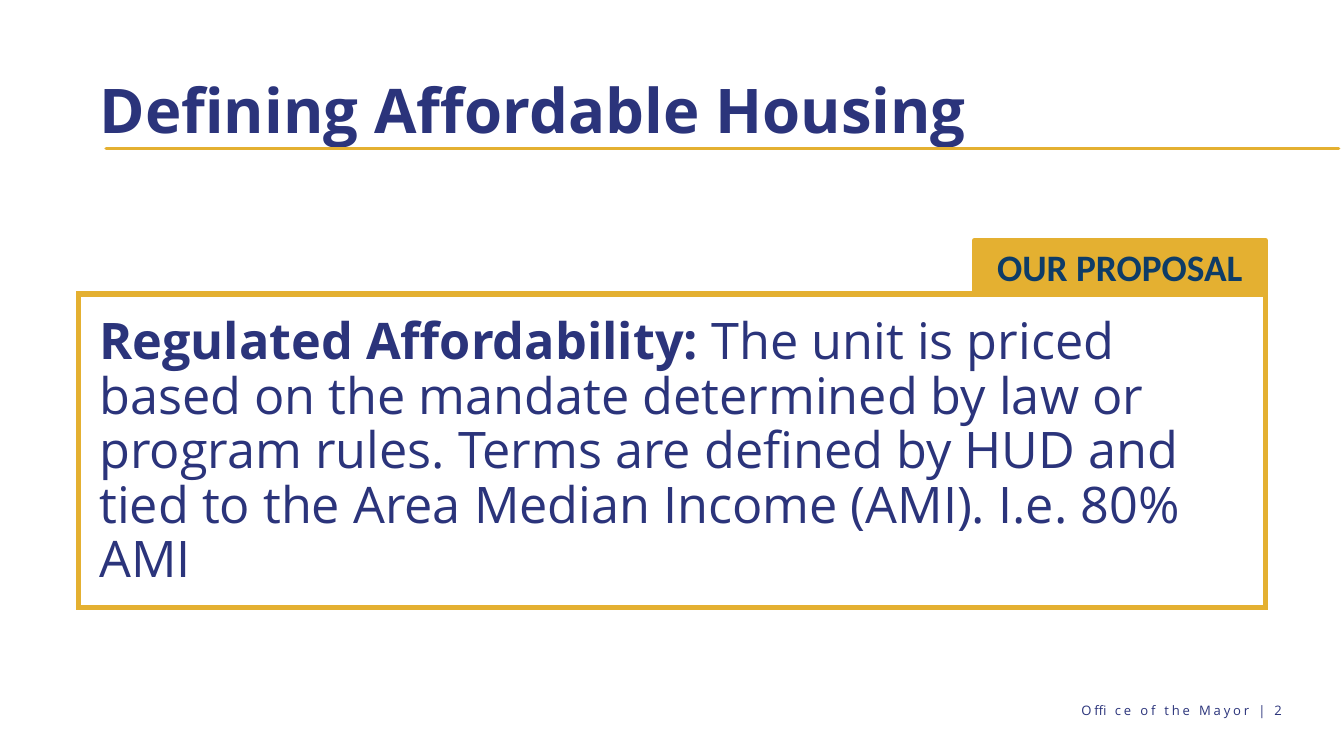
from lxml.etree import SubElement
from pptx import Presentation
from pptx.dml.color import RGBColor
from pptx.enum.shapes import MSO_CONNECTOR, MSO_SHAPE
from pptx.enum.text import MSO_ANCHOR, MSO_AUTO_SIZE, PP_ALIGN
from pptx.oxml.ns import qn
from pptx.util import Inches, Pt

NAVY = RGBColor(0x2B, 0x34, 0x7B)
INK = RGBColor(0x0E, 0x3C, 0x67)
GOLD = RGBColor(0xE4, 0xB0, 0x31)

# Each run is (text, bold)
TITLE = [("Defining Affordable Housing", True)]
BODY = [
    ("Regulated Affordability: ", True),
    ("The unit is priced based on the mandate determined by law or program "
     "rules. Terms are defined by HUD and tied to the Area Median Income "
     "(AMI). I.e. 80% AMI", False),
]
TAG = [("OUR PROPOSAL", True)]
FOOTER = [("Office of the Mayor | 2", False)]

WIDE, HIGH = 20, 11.25
LEFT, SPAN = 1.38, 17.25                  # text column
EDGE, RIGHT = 1.17, 18.83                 # frame sides
TAG_WIDE = 4.33


def place(shape, left, top, width, height):
    shape.left, shape.top = Inches(left), Inches(top)
    shape.width, shape.height = Inches(width), Inches(height)


def write(shape, runs, size, color=NAVY, font="Open Sans", align=PP_ALIGN.LEFT,
          anchor=MSO_ANCHOR.TOP, lines=1.0, track=0):
    """Fill a shape with one paragraph; track is letter spacing in points."""
    frame = shape.text_frame
    frame.word_wrap = True
    frame.auto_size = MSO_AUTO_SIZE.NONE
    frame.vertical_anchor = anchor
    para = frame.paragraphs[0]
    para.alignment, para.line_spacing = align, lines
    for text, bold in runs:
        run = para.add_run()
        run.text = text
        run.font.name, run.font.size = font, Pt(size)
        run.font.bold, run.font.color.rgb = bold, color
        if track:
            run._r.get_or_add_rPr().set("spc", str(track * 100))


def add_box(slide, left, top, width, height, fill=None):
    box = slide.shapes.add_shape(MSO_SHAPE.RECTANGLE, 0, 0, 0, 0)
    place(box, left, top, width, height)
    box.shadow.inherit = False
    if fill is None:
        box.fill.background()
    else:
        box.fill.solid()
        box.fill.fore_color.rgb = fill
    box.line.color.rgb, box.line.width = GOLD, Pt(6)
    return box


def add_text(slide, left, top, width, height):
    return slide.shapes.add_textbox(*map(Inches, (left, top, width, height)))


def main():
    deck = Presentation()
    deck.slide_width, deck.slide_height = Inches(WIDE), Inches(HIGH)
    slide = deck.slides.add_slide(deck.slide_layouts[5])

    title = slide.shapes.title
    place(title, LEFT, 0.6, SPAN, 2.17)
    write(title, TITLE, 66, anchor=MSO_ANCHOR.MIDDLE, lines=0.9)

    body = add_text(slide, LEFT, 4.66, SPAN, 4.2)
    write(body, BODY, 54, lines=0.9)

    footer = add_text(slide, 14.84, 10.46, 4.24, 0.24)
    frame = footer.text_frame
    frame.margin_left = frame.margin_right = 0
    frame.margin_top = frame.margin_bottom = 0
    write(footer, FOOTER, 14, align=PP_ALIGN.RIGHT, track=3)

    rule = slide.shapes.add_connector(
        MSO_CONNECTOR.STRAIGHT, *map(Inches, (1.58, 2.21, 19.92, 2.21)))
    rule.line.color.rgb, rule.line.width = GOLD, Pt(4)
    rule.line._get_or_add_ln().set("cap", "rnd")
    SubElement(rule._element.spPr, qn("a:effectLst"))

    outline = add_box(slide, EDGE, 4.38, RIGHT - EDGE, 4.66)
    SubElement(outline.line._get_or_add_ln(), qn("a:miter")).set("lim", "800000")
    tag = add_box(slide, RIGHT - TAG_WIDE, 3.58, TAG_WIDE, 0.77, GOLD)
    write(tag, TAG, 40, INK, "Calibri", PP_ALIGN.CENTER, MSO_ANCHOR.MIDDLE)

    deck.save("out.pptx")


if __name__ == "__main__":
    main()
